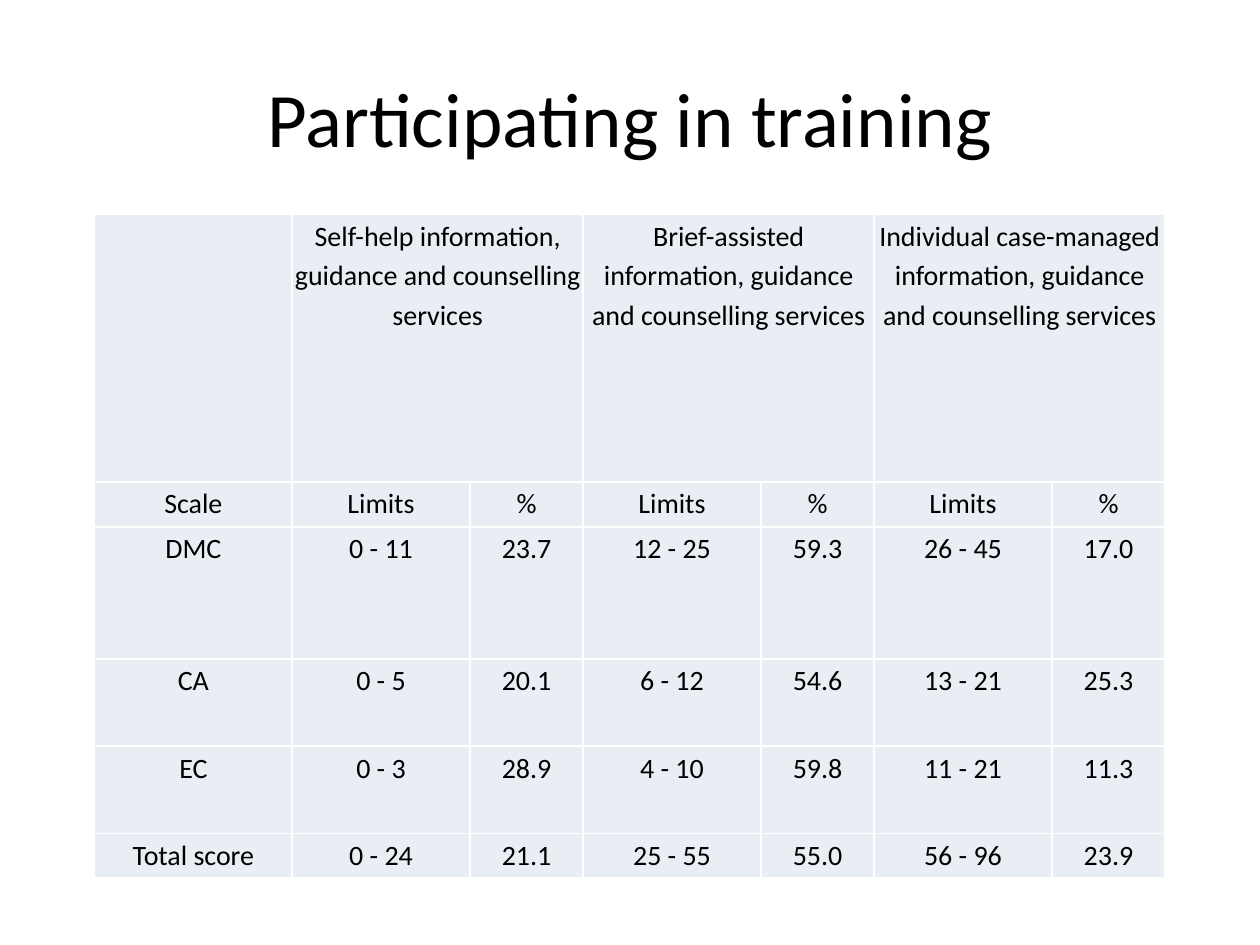
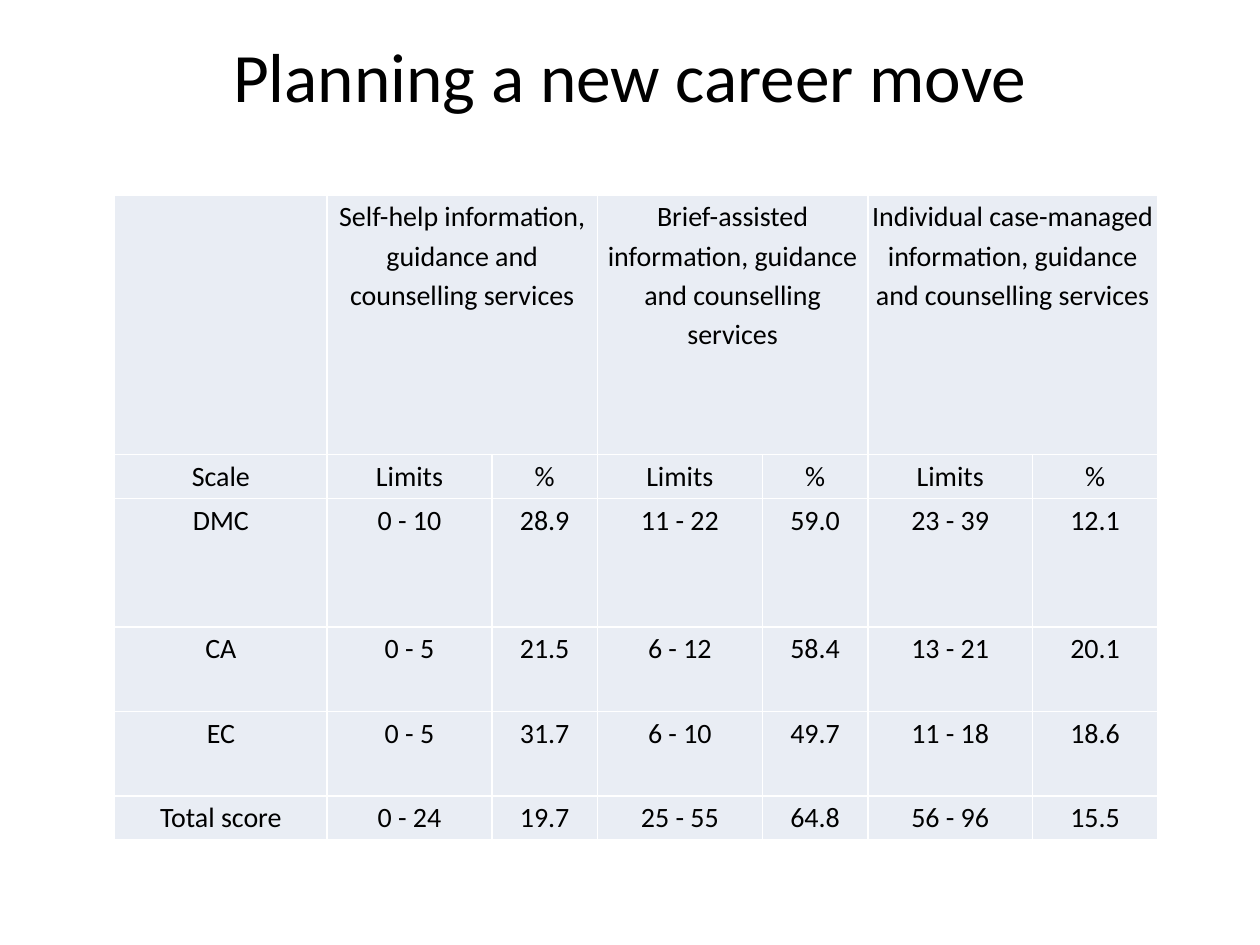
"""Build two slides that tabulate service limits and shares by scale."""
from pptx import Presentation
from pptx.dml.color import RGBColor
from pptx.enum.text import MSO_ANCHOR, PP_ALIGN
from pptx.util import Pt

CENTER = PP_ALIGN.CENTER
MIDDLE = MSO_ANCHOR.MIDDLE
FONT = "Calibri"
INK = "000000"
FILL = "E9EDF4"
GROUPS = ["Self-help", "Brief-assisted", "Individual case-managed"]
SCALES = ["DMC", "CA", "EC", "Total score"]

SLIDES = [
    {
        "title": "Participating in training", "size": 44, "lift": 0,
        "left": 54, "top": 122.6,
        "cols": [113, 101.5, 64.8, 101.5, 64.8, 101.5, 64.8],
        "rows": [152.9, 25.6, 75.6, 49.8, 49.8, 25.6],
        "data": [
            ["0 - 11", "23.7", "12 - 25", "59.3", "26 - 45", "17.0"],
            ["0 - 5", "20.1", "6 - 12", "54.6", "13 - 21", "25.3"],
            ["0 - 3", "28.9", "4 - 10", "59.8", "11 - 21", "11.3"],
            ["0 - 24", "21.1", "25 - 55", "55.0", "56 - 96", "23.9"],
        ],
    },
    {
        "title": "Planning a new career move", "size": 39.6, "lift": 48,
        "left": 65.5, "top": 111.4,
        "cols": [121.4, 94.2, 60.3, 94.2, 60.3, 94.2, 71.4],
        "rows": [148.2, 25.2, 73.4, 48.3, 48.3, 25.2],
        "data": [
            ["0 - 10", "28.9", "11 - 22", "59.0", "23 - 39", "12.1"],
            ["0 - 5", "21.5", "6 - 12", "58.4", "13 - 21", "20.1"],
            ["0 - 5", "31.7", "6 - 10", "49.7", "11 - 18", "18.6"],
            ["0 - 24", "19.7", "25 - 55", "64.8", "56 - 96", "15.5"],
        ],
    },
]


def color(code):
    return RGBColor.from_string(code)


def write(frame, text, size=16, line=1.15, after=10):
    frame.word_wrap = True
    para = frame.paragraphs[0]
    para.alignment = CENTER
    para.line_spacing = line
    para.space_after = Pt(after)
    run = para.add_run()
    run.text = text
    run.font.name = FONT
    run.font.size = Pt(size)
    run.font.color.rgb = color(INK)


deck = Presentation()
deck.slide_width, deck.slide_height = Pt(720), Pt(540)

for page in SLIDES:
    slide = deck.slides.add_slide(deck.slide_layouts[6])

    title = slide.shapes.add_textbox(Pt(36), Pt(21.6), Pt(648), Pt(90)).text_frame
    title.vertical_anchor = MIDDLE
    title.margin_bottom = Pt(3.6 + page["lift"])
    write(title, page["title"], size=page["size"], line=1.0, after=0)

    cols, rows = page["cols"], page["rows"]
    table = slide.shapes.add_table(
        len(rows), len(cols), Pt(page["left"]), Pt(page["top"]),
        Pt(sum(cols)), Pt(sum(rows))).table
    table.first_row = False
    table.horz_banding = False
    for col, width in zip(table.columns, cols):
        col.width = Pt(width)
    for row, height in zip(table.rows, rows):
        row.height = Pt(height)

    head = [""]
    for group in GROUPS:
        head += [f"{group} information, guidance and counselling services", ""]
    grid = [head, ["Scale"] + ["Limits", "%"] * len(GROUPS)]
    grid += [[scale] + vals for scale, vals in zip(SCALES, page["data"])]

    for start in range(1, len(cols), 2):
        table.cell(0, start).merge(table.cell(0, start + 1))
    for y, texts in enumerate(grid):
        for x, text in enumerate(texts):
            cell = table.cell(y, x)
            cell.fill.solid()
            cell.fill.fore_color.rgb = color(FILL)
            cell.margin_left = cell.margin_right = Pt(1.4)
            cell.margin_top = cell.margin_bottom = 0
            if text:
                write(cell.text_frame, text)

deck.save("out.pptx")
